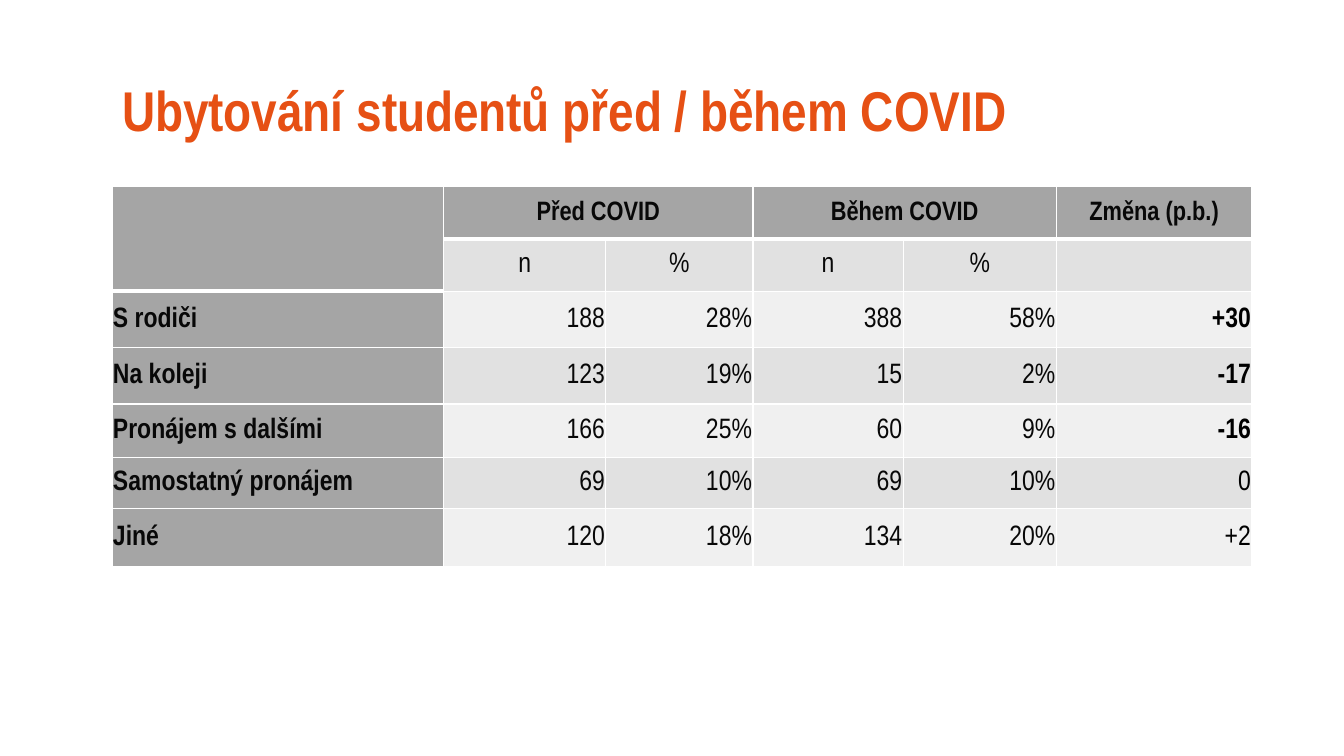
from lxml import etree
from pptx import Presentation
from pptx.dml.color import RGBColor
from pptx.enum import text
from pptx.oxml import ns
from pptx.util import Pt

FONT = "Arial Narrow"
HUES = {"title": "E65014", "head": "A5A5A5", "dark": "E1E1E1",
        "light": "F0F0F0", "ink": "080808", "black": "000000", "rule": "FFFFFF"}
COLS = [236.9, 115.9, 105.1, 107.3, 109.4, 139.7]
ROWS = [37.4, 37.4, 40.3, 40.3, 38.2, 36.7, 41]
DATA = [
    ["", "Před COVID", "", "Během COVID", "", "Změna (p.b.)"],
    ["", "n", "%", "n", "%", ""],
    ["S rodiči", "188", "28%", "388", "58%", "+30"],
    ["Na koleji", "123", "19%", "15", "2%", "-17"],
    ["Pronájem s dalšími", "166", "25%", "60", "9%", "-16"],
    ["Samostatný pronájem", "69", "10%", "69", "10%", "0"],
    ["Jiné", "120", "18%", "134", "20%", "+2"],
]


def style(para, size, hue, bold):
    """Format every run of a paragraph."""
    for run in para.runs:
        run.font.name = FONT
        run.font.size = Pt(size)
        run.font.bold = bold
        run.font.color.rgb = RGBColor.from_string(HUES[hue])


def edge(cell, top, bottom):
    """Draw the four white borders of a cell."""
    props = cell._tc.get_or_add_tcPr()
    sides = {"lnL": 1, "lnR": 1, "lnT": top, "lnB": bottom}
    for i, (tag, width) in enumerate(sides.items()):
        line = etree.Element(ns.qn("a:" + tag), w=str(Pt(width)))
        fill = etree.SubElement(line, ns.qn("a:solidFill"))
        etree.SubElement(fill, ns.qn("a:srgbClr"), val=HUES["rule"])
        props.insert(i, line)


def heavy(row, col):
    """Tell whether the line below a cell is thick."""
    return row == 0 or (row == 1 and col == 0)


def add_title(slide, left, top, width, height):
    """Place the slide title in its box."""
    title = slide.shapes.title
    title.left, title.top = Pt(left), Pt(top)
    title.width, title.height = Pt(width), Pt(height)
    frame = title.text_frame
    frame.text = "Ubytování studentů před / během COVID"
    frame.word_wrap = True
    frame.auto_size = text.MSO_AUTO_SIZE.NONE
    frame.vertical_anchor = text.MSO_ANCHOR.MIDDLE
    frame.margin_left = frame.margin_right = Pt(7.2)
    frame.margin_top = frame.margin_bottom = Pt(3.6)
    para = frame.paragraphs[0]
    para.alignment = text.PP_ALIGN.LEFT
    para.line_spacing = 0.9
    style(para, 40, "title", True)


def fill_cell(cell, row, col):
    """Write and format one table cell."""
    head = row == 0 or col == 0
    last = col == len(COLS) - 1 and row > 1
    word = DATA[row][col]
    cell.fill.solid()
    shade = "head" if head else "dark" if row % 2 else "light"
    cell.fill.fore_color.rgb = RGBColor.from_string(HUES[shade])
    edge(cell, 3 if row and heavy(row - 1, col) else 1, 3 if heavy(row, col) else 1)
    cell.margin_left = cell.margin_right = cell.margin_top = Pt(0.72)
    cell.margin_bottom = 0
    cell.vertical_anchor = text.MSO_ANCHOR.MIDDLE
    if not word:
        return
    cell.text_frame.text = word
    para = cell.text_frame.paragraphs[0]
    align = text.PP_ALIGN
    para.alignment = align.CENTER if row < 2 else align.RIGHT if col else align.LEFT
    bold = head or (last and abs(int(word)) > 9)
    style(para, 20 if row else 19, "black" if last else "ink", bold)


def add_grid(slide, left, top):
    """Build the housing table from its top left corner."""
    table = slide.shapes.add_table(len(ROWS), len(COLS), Pt(left), Pt(top),
                                   Pt(sum(COLS)), Pt(sum(ROWS))).table
    table.horz_banding = False
    for col, width in zip(table.columns, COLS):
        col.width = Pt(width)
    for row, height in zip(table.rows, ROWS):
        row.height = Pt(height)
    for r in range(len(ROWS)):
        for c in range(len(COLS)):
            fill_cell(table.cell(r, c), r, c)
    table.cell(0, 0).merge(table.cell(1, 0))
    for c in (1, 3):
        table.cell(0, c).merge(table.cell(0, c + 1))


def main():
    """Build and save the slide."""
    deck = Presentation()
    deck.slide_width, deck.slide_height = Pt(960), Pt(540)
    slide = deck.slides.add_slide(deck.slide_layouts[5])
    add_title(slide, 80, 28.8, 814.3, 104.4)
    add_grid(slide, 80, 133.2)
    deck.save("out.pptx")


if __name__ == "__main__":
    main()
